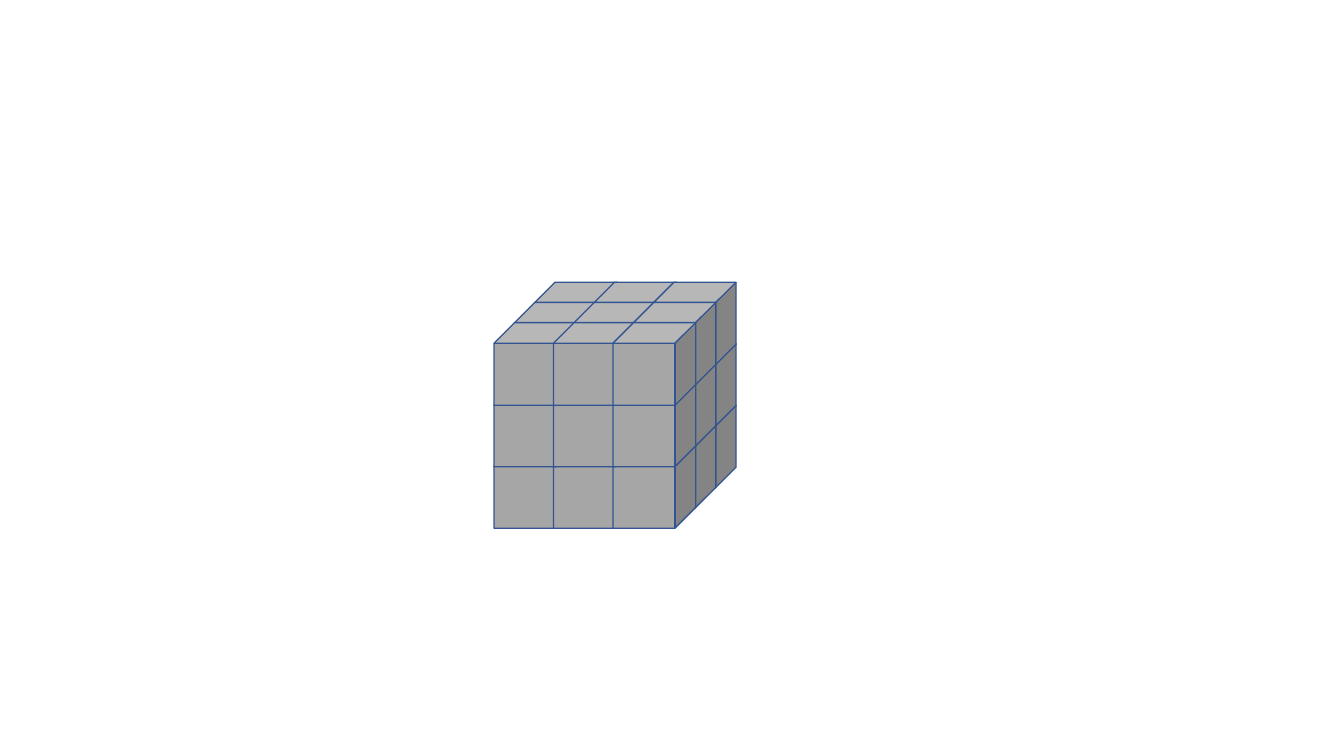
from itertools import product

from pptx import Presentation
from pptx import util as u
from pptx.dml.color import RGBColor
from pptx.enum import shapes

COLORS = {"face": "A6A6A6", "edge": "325491"}
COUNT = 3
CUBE_SIZE = 0.82
COLUMN_STEP = 0.59
DEPTH_STEP = 0.2
LAYER_STEP = 0.61


def add_cube(group, left, top):
    cube = group.shapes.add_shape(
        shapes.MSO_SHAPE.CUBE,
        u.Inches(left), u.Inches(top), u.Inches(CUBE_SIZE), u.Inches(CUBE_SIZE),
    )
    cube.shadow.inherit = False
    cube.fill.solid()
    cube.fill.fore_color.rgb = RGBColor.from_string(COLORS["face"])
    cube.line.color.rgb = RGBColor.from_string(COLORS["edge"])
    cube.line.width = u.Pt(1)


def add_layer(slide, left, top):
    group = slide.shapes.add_group_shape()
    for row, column in product(range(COUNT), repeat=2):
        add_cube(
            group,
            left + (COUNT - 1 - row) * DEPTH_STEP + column * COLUMN_STEP,
            top + row * DEPTH_STEP,
        )


def add_cube_stack(slide, left, top):
    for layer in reversed(range(COUNT)):
        add_layer(slide, left, top + layer * LAYER_STEP)


def main():
    presentation = Presentation()
    presentation.slide_width = u.Inches(13.33)
    presentation.slide_height = u.Inches(7.5)
    slide = presentation.slides.add_slide(presentation.slide_layouts[6])
    add_cube_stack(slide, left=4.9, top=2.8)
    presentation.save("out.pptx")


if __name__ == "__main__":
    main()
